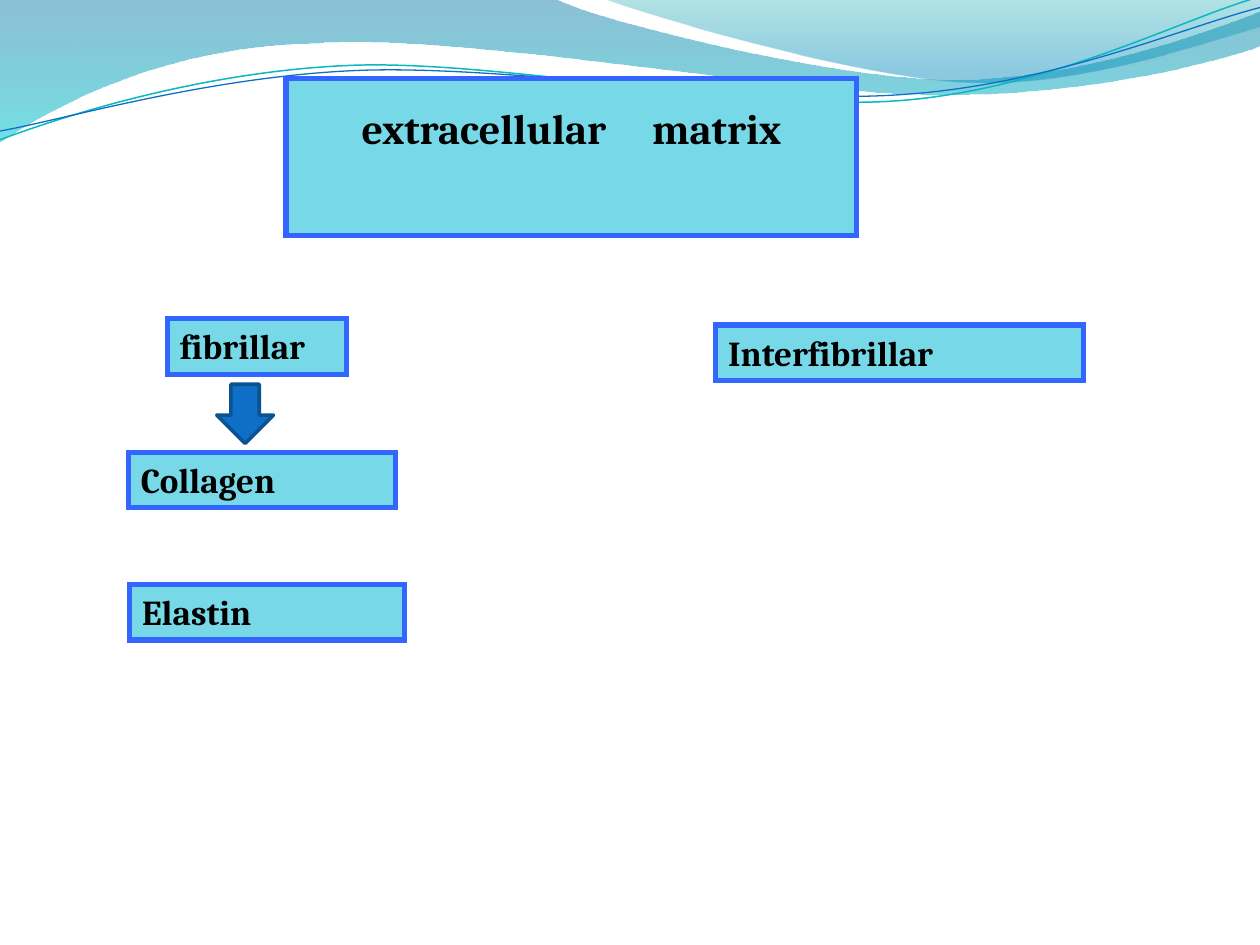
from dataclasses import dataclass

from lxml.etree import SubElement
from pptx import Presentation
from pptx.dml.color import RGBColor
from pptx.enum.shapes import MSO_SHAPE
from pptx.enum.text import MSO_ANCHOR, MSO_AUTO_SIZE, PP_ALIGN
from pptx.oxml.ns import qn
from pptx.util import Inches, Pt


@dataclass(frozen=True)
class Theme:
    font: str = "Cambria"
    text: str = "000000"
    box_fill: str = "77D9E8"
    box_line: str = "3366FF"
    arrow_fill: str = "0F6FC6"
    arrow_line: str = "0B5292"
    teal_line: str = "0AB8BF"
    title_size: int = 24
    label_size: int = 20
    box_width: int = 3
    arrow_width: int = 2
    word_gap: int = 21


THEME = Theme()
LABEL_HEIGHT = 0.44


@dataclass(frozen=True)
class Label:
    text: str
    left: float
    top: float
    width: float


@dataclass(frozen=True)
class Stop:
    position: float
    color: str
    opacity: int


@dataclass(frozen=True)
class Wave:
    start: tuple
    segments: tuple
    stops: tuple = ()
    line: str = ""
    line_width: float = 0


LABELS = (
    Label("fibrillar", 1.33, 2.53, 1.42),
    Label("Interfibrillar", 5.68, 2.58, 2.92),
    Label("Elastin", 1.03, 4.64, 2.18),
    Label("Collagen", 1.02, 3.59, 2.12),
)

WAVES = (
    Wave(
        (0, 0),
        (
            ((4.4, -0.01),),
            ((4.76, 0.17), (6.64, 0.63), (7.58, 0.63)),
            ((8.53, 0.63), (9.58, 0.26), (10, 0.09)),
            ((10.01, 0.36),),
            ((9.83, 0.44), (8.7, 0.76), (7.46, 0.75)),
            ((6.22, 0.75), (3.82, 0.28), (2.57, 0.34)),
            ((1.29, 0.36), (0.46, 0.83), (-0.01, 1.13)),
            ((0, 0),),
        ),
        stops=(Stop(0, "0074A1", 45), Stop(1, "00C6CF", 55)),
    ),
    Wave(
        (4.79, -0.01),
        (
            ((5.09, 0.11), (6.82, 0.62), (7.69, 0.65)),
            ((8.56, 0.69), (9.61, 0.32), (10, 0.21)),
            ((10, 0),),
            ((4.79, -0.01),),
        ),
        stops=(Stop(0, "00A1A9", 30), Stop(0.8, "008BBF", 45)),
    ),
    Wave(
        (0, 1.11),
        (
            ((0.48, 0.93), (1.58, 0.57), (2.77, 0.52)),
            ((3.95, 0.47), (5.93, 0.89), (7.13, 0.8)),
            ((8.33, 0.71), (9.38, 0.15), (9.98, -0.02)),
        ),
        line=THEME.teal_line,
        line_width=0.85,
    ),
    Wave(
        (0, 1.04),
        (
            ((0.47, 0.96), (1.64, 0.61), (2.83, 0.56)),
            ((4.03, 0.51), (5.97, 0.84), (7.17, 0.75)),
            ((8.36, 0.67), (9.41, 0.21), (10, 0.06)),
        ),
        line=THEME.arrow_fill,
        line_width=0.75,
    ),
)


def apply_format(target, values: dict) -> None:
    for name, value in values.items():
        setattr(target, name, value)


def paint(shape, fill: str, line: str, width: float) -> None:
    shape.fill.solid()
    shape.fill.fore_color.rgb = RGBColor.from_string(fill)
    shape.line.color.rgb = RGBColor.from_string(line)
    shape.line.width = Pt(width)


def paint_box(shape) -> None:
    paint(shape, THEME.box_fill, THEME.box_line, THEME.box_width)
    outline = shape.element.xpath("./p:spPr/a:ln")[0]
    SubElement(outline, qn("a:miter")).set("lim", "800000")


def format_text(shape, size: int, paragraph_values: dict) -> None:
    apply_format(shape.text_frame, {
        "word_wrap": True,
        "auto_size": MSO_AUTO_SIZE.NONE,
        "vertical_anchor": MSO_ANCHOR.TOP,
    })
    paragraph = shape.text_frame.paragraphs[0]
    apply_format(paragraph, paragraph_values)
    for run in paragraph.runs:
        apply_format(run.font, {"name": THEME.font, "size": Pt(size), "bold": True})
        run.font.color.rgb = RGBColor.from_string(THEME.text)


def bend_segments(shape, segments: tuple) -> None:
    lines = iter(shape.element.xpath(".//a:path/a:lnTo"))
    for segment in segments:
        line = next(lines)
        if len(segment) == 3:
            curve = line.makeelement(qn("a:cubicBezTo"))
            line.addprevious(curve)
            for part in (line, next(lines), next(lines)):
                curve.append(part[0])
                part.getparent().remove(part)


def draw_wave(slide, wave: Wave) -> None:
    points = [wave.start, *(point for segment in wave.segments for point in segment)]
    vertices = [(Inches(x), Inches(y)) for x, y in points]
    builder = slide.shapes.build_freeform(*vertices[0])
    builder.add_line_segments(vertices[1:], close=bool(wave.stops))
    shape = builder.convert_to_shape()
    bend_segments(shape, wave.segments)
    shape.shadow.inherit = False
    if wave.stops:
        shape.line.fill.background()
        shape.fill.gradient()
        shape.fill.gradient_angle = 270
        for target, stop in zip(shape.fill.gradient_stops, wave.stops):
            target.position = stop.position
            target.color.rgb = RGBColor.from_string(stop.color)
        colors = shape.element.xpath(".//a:gs/a:srgbClr")
        for color, stop in zip(colors, wave.stops):
            SubElement(color, qn("a:alpha")).set("val", str(stop.opacity * 1000))
    else:
        shape.fill.background()
        shape.line.color.rgb = RGBColor.from_string(wave.line)
        shape.line.width = Pt(wave.line_width)
    slide.slide_layout.slide_master.shapes.element.append(shape.element)


def draw_title(slide) -> None:
    title = slide.shapes.title
    apply_format(title, {
        "left": Inches(2.27),
        "top": Inches(0.62),
        "width": Inches(4.53),
        "height": Inches(1.25),
    })
    paint_box(title)
    paragraph = title.text_frame.paragraphs[0]
    for text in ("extracellular", " ", "matrix"):
        paragraph.add_run().text = text
    format_text(title, THEME.title_size, {"alignment": PP_ALIGN.CENTER, "line_spacing": 1.35})
    gap = paragraph.runs[1]
    gap.font._element.set("spc", str(THEME.word_gap * 100))


def draw_label(slide, label: Label) -> None:
    shape = slide.shapes.add_shape(
        MSO_SHAPE.RECTANGLE, Inches(label.left), Inches(label.top),
        Inches(label.width), Inches(LABEL_HEIGHT),
    )
    shape.shadow.inherit = False
    paint_box(shape)
    shape.text_frame.text = label.text
    format_text(shape, THEME.label_size, {"alignment": PP_ALIGN.LEFT})


def draw_arrow(slide) -> None:
    arrow = slide.shapes.add_shape(
        MSO_SHAPE.DOWN_ARROW, Inches(1.72), Inches(3.05), Inches(0.45), Inches(0.47)
    )
    arrow.shadow.inherit = False
    paint(arrow, THEME.arrow_fill, THEME.arrow_line, THEME.arrow_width)


def main() -> None:
    presentation = Presentation()
    apply_format(presentation, {"slide_width": Inches(10), "slide_height": Inches(7.5)})
    slide = presentation.slides.add_slide(presentation.slide_layouts.get_by_name("Title Only"))
    for wave in WAVES:
        draw_wave(slide, wave)
    draw_title(slide)
    for label in LABELS:
        draw_label(slide, label)
    draw_arrow(slide)
    presentation.save("out.pptx")


if __name__ == "__main__":
    main()
